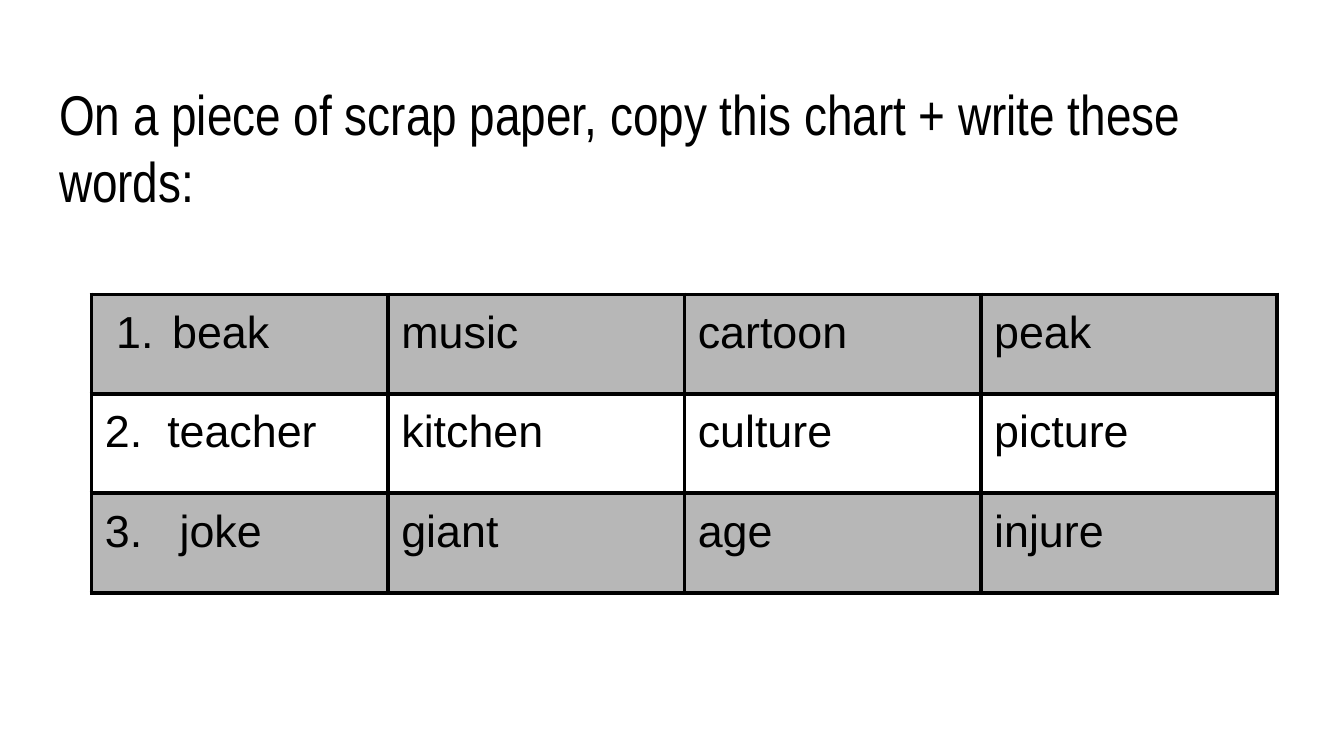
"""Build a slide with a heading and a chart of words to write."""
from dataclasses import dataclass

from lxml import etree
from pptx import Presentation
from pptx.dml.color import RGBColor
from pptx.enum import text as t
from pptx.oxml import ns
from pptx.util import Pt

HUES = {"ink": "000000", "band": "B7B7B7", "page": "FFFFFF"}
PAD = 7.2
EDGE = 2.25


@dataclass
class Word:
    text: str
    auto: bool = False
    tab: float = 0


@dataclass
class Row:
    words: list[Word]
    hue: str


ROWS = [
    Row([Word("beak", auto=True), Word("music"), Word("cartoon"), Word("peak")], "band"),
    Row([Word("2.\tteacher", tab=33.4), Word("kitchen"), Word("culture"), Word("picture")], "page"),
    Row([Word("3.\tjoke", tab=40), Word("giant"), Word("age"), Word("injure")], "band"),
]


def tint(name: str) -> RGBColor:
    return RGBColor.from_string(HUES[name])


def add_run(para, words: str, size: float, face: str) -> None:
    run = para.add_run()
    run.text = words
    run.font.size = Pt(size)
    run.font.name = face
    run.font.color.rgb = tint("ink")


def add_edges(cell) -> None:
    props = cell._tc.get_or_add_tcPr()
    for spot, side in enumerate(("lnL", "lnR", "lnT", "lnB")):
        line = etree.Element(ns.qn(f"a:{side}"), w=str(Pt(EDGE)))
        fill = etree.SubElement(line, ns.qn("a:solidFill"))
        etree.SubElement(fill, ns.qn("a:srgbClr"), val=HUES["ink"])
        props.insert(spot, line)


def add_list(para, word: Word) -> None:
    props = para._p.get_or_add_pPr()
    if word.auto:
        props.set("marL", str(Pt(36)))
        props.set("indent", str(Pt(-30)))
        etree.SubElement(props, ns.qn("a:buFont"), typeface="Arial")
        etree.SubElement(props, ns.qn("a:buAutoNum"), type="arabicPeriod")
    if word.tab:
        stops = etree.SubElement(props, ns.qn("a:tabLst"))
        etree.SubElement(stops, ns.qn("a:tab"), pos=str(Pt(word.tab)), algn="l")


def fill_cell(cell, word: Word, hue: str) -> None:
    cell.margin_left = cell.margin_right = Pt(PAD)
    cell.margin_top = cell.margin_bottom = Pt(PAD)
    cell.fill.solid()
    cell.fill.fore_color.rgb = tint(hue)
    add_edges(cell)
    para = cell.text_frame.paragraphs[0]
    add_list(para, word)
    add_run(para, word.text, 24, "Arial")


def add_title(slide, words: str) -> None:
    title = slide.shapes.title
    title.left, title.top, title.width, title.height = map(Pt, (24.5, 35.3, 671, 45.4))
    frame = title.text_frame
    frame.word_wrap = True
    frame.auto_size = t.MSO_AUTO_SIZE.NONE
    frame.vertical_anchor = t.MSO_ANCHOR.TOP
    frame.margin_left = frame.margin_right = Pt(PAD)
    frame.margin_top = frame.margin_bottom = Pt(PAD)
    para = frame.paragraphs[0]
    para.alignment = t.PP_ALIGN.LEFT
    add_run(para, words, 30, "Arial Narrow")


def add_chart(slide, rows: list[Row]) -> None:
    wide, high = 158.8, 53.3
    count = len(rows[0].words)
    box = map(Pt, (49, 157.7, wide * count, high * len(rows)))
    table = slide.shapes.add_table(len(rows), count, *box).table
    table.first_row = table.horz_banding = False
    for col in table.columns:
        col.width = Pt(wide)
    for line, row in zip(table.rows, rows):
        line.height = Pt(high)
        for cell, word in zip(line.cells, row.words):
            fill_cell(cell, word, row.hue)


def main() -> None:
    deck = Presentation()
    deck.slide_width, deck.slide_height = Pt(720), Pt(405)
    slide = deck.slides.add_slide(deck.slide_layouts[5])
    add_title(slide, "On a piece of scrap paper, copy this chart + write these words:")
    add_chart(slide, ROWS)
    deck.save("out.pptx")


if __name__ == "__main__":
    main()
